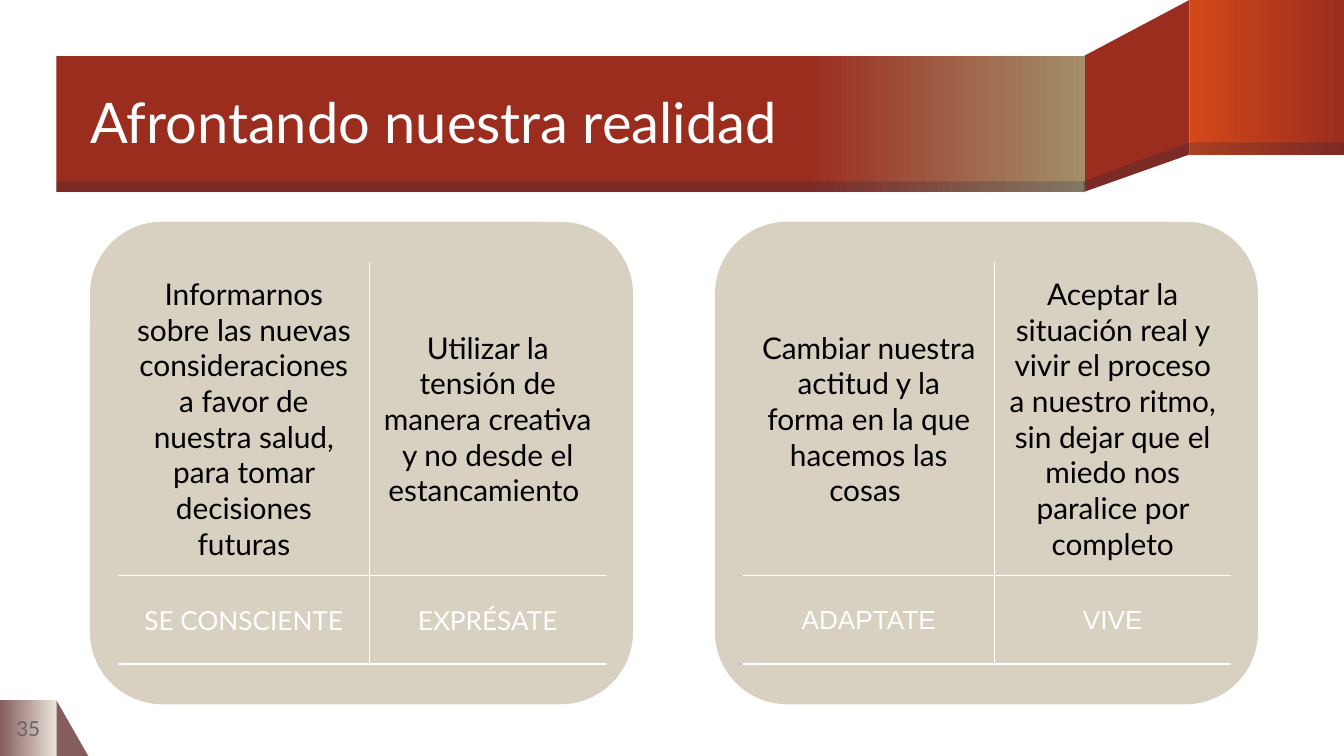
"""Builds the slide on facing our reality: a ribbon title and two cards with tables."""
from lxml.etree import SubElement
from pptx import Presentation
from pptx.dml.color import RGBColor
from pptx.enum.shapes import MSO_SHAPE
from pptx.enum.text import MSO_ANCHOR, PP_ALIGN
from pptx.oxml.ns import qn
from pptx.util import Inches, Pt

TITLE = "Afrontando nuestra realidad"
NUMBER = "35"
CARDS = [
    (0.67, "Lato", [
        ("Informarnos sobre las nuevas consideraciones a favor de nuestra salud, "
         "para tomar decisiones futuras", "SE CONSCIENTE"),
        ("Utilizar la tensión de manera creativa y no desde el estancamiento ", "EXPRÉSATE"),
    ]),
    (5.32, "Arial", [
        ("Cambiar nuestra actitud y la forma en la que hacemos las cosas ", "ADAPTATE"),
        ("Aceptar la situación real y vivir el proceso a nuestro ritmo, sin dejar que "
         "el miedo nos paralice por completo", "VIVE"),
    ]),
]
WHITE, BLACK, GREY = "FFFFFF", "000000", "696464"
RED, ORANGE, OLIVE = "9B2D1F", "D34817", "A28E6A"
MAUVE, CREAM, BEIGE, NAVY = "855D5D", "E9E5DC", "D8D0C0", "001F46"
COLS, ROWS = (1.87, 1.76), (2.3, 0.66)
PLAIN = "{2D5ABB26-0587-4C30-8999-92F81FD0307C}"
RECT = MSO_SHAPE.RECTANGLE


def color(code):
    return RGBColor.from_string(code)


def paint(shape, code, alpha=None):
    shape.shadow.inherit = False
    shape.line.fill.background()
    shape.fill.solid()
    shape.fill.fore_color.rgb = color(code)
    if alpha:
        tint = shape._element.spPr.find(qn("a:solidFill"))[0]
        SubElement(tint, qn("a:alpha"), val=str(alpha * 1000))


def blend(shape, stops):
    paint(shape, WHITE)
    shape.fill.gradient()
    shape.fill.gradient_angle = 0
    group = shape._element.spPr.find(qn("a:gradFill")).find(qn("a:gsLst"))
    for stop in list(group):
        group.remove(stop)
    for place, code in stops:
        stop = SubElement(group, qn("a:gs"), pos=str(place * 1000))
        SubElement(stop, qn("a:srgbClr"), val=code)


def add(kind, *box):
    return slide.shapes.add_shape(kind, *map(Inches, box))


def outline(points):
    first, *rest = [tuple(map(Inches, point)) for point in points]
    form = slide.shapes.build_freeform(*first)
    form.add_line_segments(rest, close=True)
    return form.convert_to_shape()


def style(para, size, font, code):
    para.font.size = Pt(size)
    para.font.name = font
    para.font.color.rgb = color(code)


def label(box, text, size, code, align):
    frame = slide.shapes.add_textbox(*map(Inches, box)).text_frame
    frame.word_wrap = True
    frame.vertical_anchor = MSO_ANCHOR.MIDDLE
    frame.margin_left = frame.margin_right = frame.margin_top = frame.margin_bottom = 0
    para = frame.paragraphs[0]
    para.text, para.alignment = text, align
    style(para, size, "Lato", code)
    return para


def border(cell, sides):
    props = cell._tc.get_or_add_tcPr()
    for side in sides:
        line = SubElement(props, qn("a:ln" + side), w=str(Pt(1)))
        SubElement(SubElement(line, qn("a:solidFill")), qn("a:srgbClr"), val=WHITE)


def card(left, font, pairs):
    panel = add(MSO_SHAPE.ROUNDED_RECTANGLE, left, 1.65, 4.04, 3.59)
    panel.adjustments[0] = 0.15
    paint(panel, BEIGE)
    box = map(Inches, (left + 0.21, 1.95, sum(COLS), sum(ROWS)))
    table = slide.shapes.add_table(2, 2, *box).table
    table.first_row = table.horz_banding = False
    table._tbl.tblPr.find(qn("a:tableStyleId")).text = PLAIN
    for row, high in zip(table.rows, ROWS):
        row.height = Inches(high)
    looks = [(16, "Lato", BLACK), (14, font, WHITE)]
    for x, pair in enumerate(pairs):
        table.columns[x].width = Inches(COLS[x])
        for y, text in enumerate(pair):
            cell = table.cell(y, x)
            cell.vertical_anchor = MSO_ANCHOR.MIDDLE
            cell.margin_left = cell.margin_right = Inches(0.1)
            cell.margin_top = cell.margin_bottom = Inches(0.1)
            border(cell, "RL"[x] + ("T" if y else "") + "B")
            cell.fill.background()
            para = cell.text_frame.paragraphs[0]
            para.text, para.alignment = text, PP_ALIGN.CENTER
            style(para, *looks[y])


deck = Presentation()
deck.slide_width, deck.slide_height = Inches(10), Inches(10) * 9 // 16
slide = deck.slides.add_slide(deck.slide_layouts[6])

paint(add(MSO_SHAPE.RIGHT_TRIANGLE, 0.42, 5.21, 0.24, 0.42), MAUVE)
blend(add(RECT, 0, 5.21, 0.42, 0.42), [(0, MAUVE), (100, CREAM)])
paint(outline([(8.85, 0), (8.06, 0.42), (8.06, 1.43), (8.85, 1.15)]), RED)
blend(add(RECT, 8.85, 0, 1.15, 1.15), [(0, ORANGE), (100, RED)])
blend(add(RECT, 0.42, 0.42, 7.65, 1.01), [(0, RED), (73, RED), (100, OLIVE)])
paint(outline([(8.85, 1.06), (8.06, 1.35), (8.06, 1.43), (8.85, 1.15)]), NAVY, 20)
paint(add(RECT, 8.85, 1.06, 1.15, 0.09), NAVY, 20)
paint(add(RECT, 0.42, 1.35, 7.65, 0.08), NAVY, 20)

label((0.67, 0.43, 7.39, 1.01), TITLE, 30, WHITE, PP_ALIGN.LEFT).line_spacing = 0.9
label((0, 5.21, 0.42, 0.42), NUMBER, 11, GREY, PP_ALIGN.CENTER)
for item in CARDS:
    card(*item)

deck.save("out.pptx")
